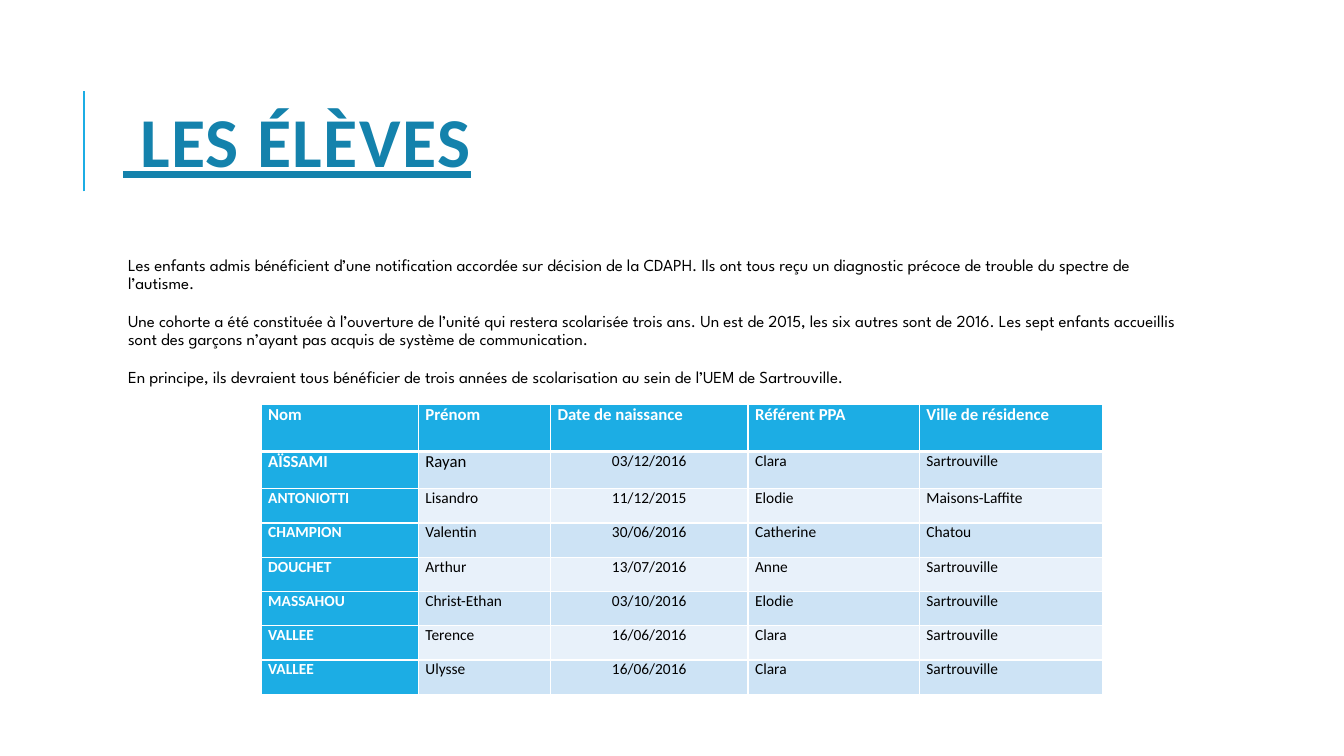
from dataclasses import dataclass, field
from typing import Any

from lxml.etree import SubElement
from pptx import Presentation
from pptx.dml.color import RGBColor
from pptx.enum.shapes import MSO_CONNECTOR
from pptx.enum.text import MSO_ANCHOR as Anchor, MSO_AUTO_SIZE as AutoSize, PP_ALIGN as Align
from pptx.oxml.ns import qn
from pptx.util import Inches, Pt

WIDTH, HEIGHT = Inches(13.33), Inches(7.5)
BLUE, DEEP_BLUE, WHITE, BLACK = "1CADE4", "1482AC", "FFFFFF", "000000"
BANDS = ("CDE3F5", "E8F1FA")

TITLE = " LES ÉLÈVES"
INTRO = (
    "Les enfants admis bénéficient d’une notification accordée sur décision de la CDAPH. "
    "Ils ont tous reçu un diagnostic précoce de trouble du spectre de l’autisme.",
    "Une cohorte a été constituée à l’ouverture de l’unité qui restera scolarisée trois ans. "
    "Un est de 2015, les six autres sont de 2016. Les sept enfants accueillis sont des garçons "
    "n’ayant pas acquis de système de communication.",
    "En principe, ils devraient tous bénéficier de trois années de scolarisation "
    "au sein de l’UEM de Sartrouville.",
)
PUPILS = (
    ("Nom", "Prénom", "Date de naissance", "Référent PPA", "Ville de résidence"),
    ("AÏSSAMI", "Rayan", "03/12/2016", "Clara", "Sartrouville"),
    ("ANTONIOTTI", "Lisandro", "11/12/2015", "Elodie", "Maisons-Laffite"),
    ("CHAMPION", "Valentin", "30/06/2016", "Catherine", "Chatou"),
    ("DOUCHET", "Arthur", "13/07/2016", "Anne", "Sartrouville"),
    ("MASSAHOU", "Christ-Ethan", "03/10/2016", "Elodie", "Sartrouville"),
    ("VALLEE", "Terence", "16/06/2016", "Clara", "Sartrouville"),
    ("VALLEE", "Ulysse", "16/06/2016", "Clara", "Sartrouville"),
)
COLUMN_SHARES = (11.7, 9.83, 14.7, 12.75, 13.65)
ROW_SHARES = (6.27, 4.93) + (4.53,) * 6
DATE_COLUMN = 2


@dataclass(frozen=True)
class Area:
    """A rectangle in percent of the slide's width and height."""
    left: float
    top: float
    width: float
    height: float

    def lengths(self) -> tuple:
        """Return left, top, width and height as lengths."""
        return across(self.left), down(self.top), across(self.width), down(self.height)


@dataclass(frozen=True)
class Style:
    """The look of a paragraph and its text."""
    color: str
    font: dict[str, Any]
    para: dict[str, Any] = field(default_factory=dict)


TITLE_AREA = Area(8.4, 8.53, 79.74, 21.87)
INTRO_AREA = Area(8.4, 33.33, 79.74, 20.13)
TABLE_AREA = Area(19.43, 53.47, sum(COLUMN_SHARES), sum(ROW_SHARES))
RULE_AREA = Area(6.23, 12, 0, 13.33)

TITLE_STYLE = Style(DEEP_BLUE, dict(name="Calibri", size=Pt(50), bold=True, underline=True),
                    dict(alignment=Align.LEFT, line_spacing=0.8))
INTRO_STYLE = Style(BLACK, dict(name="League Spartan", size=Pt(12)),
                    dict(alignment=Align.LEFT, line_spacing=0.9, space_after=Pt(2)))


def across(share: float) -> int:
    """Turn a percentage of the slide's width into a length."""
    return round(WIDTH * share / 100)


def down(share: float) -> int:
    """Turn a percentage of the slide's height into a length."""
    return round(HEIGHT * share / 100)


def rgb(color: str) -> RGBColor:
    """Turn a hex string into a colour."""
    return RGBColor.from_string(color)


def assign(target: Any, values: dict[str, Any]) -> None:
    """Set each named attribute of the target."""
    for name, value in values.items():
        setattr(target, name, value)


def write(para: Any, text: str, style: Style) -> Any:
    """Add styled text to a paragraph and return its run."""
    assign(para, style.para)
    span = para.add_run()
    span.text = text
    assign(span.font, style.font)
    span.font.color.rgb = rgb(style.color)
    return span


def place(box: Any, area: Area, frame: dict[str, Any]) -> None:
    """Move a placeholder and format its text frame."""
    assign(box, dict(zip(("left", "top", "width", "height"), area.lengths())))
    assign(box.text_frame, dict(word_wrap=True, auto_size=AutoSize.NONE, **frame))


def draw_rule(page: Any) -> None:
    """Draw the upright line beside the title."""
    left, top, width, height = RULE_AREA.lengths()
    rule = page.shapes.add_connector(MSO_CONNECTOR.STRAIGHT, left, top + height, left + width, top)
    rule.line.color.rgb = rgb(BLUE)
    rule.line.width = Pt(1.5)
    SubElement(rule._element.spPr, qn("a:effectLst"))


def draw_title(box: Any) -> None:
    """Fill the title placeholder."""
    place(box, TITLE_AREA, dict(vertical_anchor=Anchor.MIDDLE))
    span = write(box.text_frame.paragraphs[0], TITLE, TITLE_STYLE)
    span.font._element.set("spc", "100")


def draw_intro(box: Any) -> None:
    """Fill the body placeholder with the introduction."""
    margins = dict.fromkeys(("margin_left", "margin_right", "margin_top", "margin_bottom"), Inches(0.05))
    place(box, INTRO_AREA, dict(vertical_anchor=Anchor.TOP, **margins))
    for index, text in enumerate(INTRO):
        para = box.text_frame.add_paragraph() if index else box.text_frame.paragraphs[0]
        props = para._p.get_or_add_pPr()
        props.set("marL", str(Inches(0.1)))
        props.set("indent", "0")
        SubElement(props, qn("a:buNone"))
        para.space_before = Pt(12 if index else 0)
        write(para, text, INTRO_STYLE)


def add_border(cell: Any, side: str, points: float) -> None:
    """Give one side of a cell a white border."""
    border = SubElement(cell._tc.get_or_add_tcPr(), qn(f"a:ln{side}"), w=str(Pt(points)))
    SubElement(SubElement(border, qn("a:solidFill")), qn("a:srgbClr"), val=WHITE)


def draw_cell(cell: Any, text: str, row: int, column: int) -> None:
    """Format and fill one cell of the table."""
    heading = row == 0 or column == 0
    large = row == 0 or (row == 1 and column < DATE_COLUMN)
    centred = row > 0 and column == DATE_COLUMN
    for side in "LRTB":
        add_border(cell, side, 3 if (row, side) in ((0, "B"), (1, "T")) else 1)
    cell.fill.solid()
    cell.fill.fore_color.rgb = rgb(BLUE if heading else BANDS[(row - 1) % 2])
    assign(cell, dict(margin_left=Inches(0.07), margin_right=Inches(0.07), margin_top=0,
                      margin_bottom=0, vertical_anchor=Anchor.TOP))
    style = Style(WHITE if heading else BLACK,
                  dict(name="Calibri", size=Pt(12 if large else 11), bold=heading),
                  dict(alignment=Align.CENTER if centred else Align.LEFT, space_after=Pt(10)))
    write(cell.text_frame.paragraphs[0], text, style)


def draw_table(page: Any) -> None:
    """Draw the table of pupils."""
    table = page.shapes.add_table(len(PUPILS), len(COLUMN_SHARES), *TABLE_AREA.lengths()).table
    assign(table, dict(first_row=False, horz_banding=False))
    for column, share in zip(table.columns, COLUMN_SHARES):
        column.width = across(share)
    for row, share in zip(table.rows, ROW_SHARES):
        row.height = down(share)
    for row, pupil in enumerate(PUPILS):
        for column, text in enumerate(pupil):
            draw_cell(table.cell(row, column), text, row, column)


def main() -> None:
    """Build the slide and save it."""
    deck = Presentation()
    assign(deck, dict(slide_width=WIDTH, slide_height=HEIGHT))
    page = deck.slides.add_slide(deck.slide_layouts[1])
    draw_rule(page)
    draw_title(page.shapes.title)
    draw_intro(page.placeholders[1])
    draw_table(page)
    deck.save("out.pptx")


if __name__ == "__main__":
    main()
